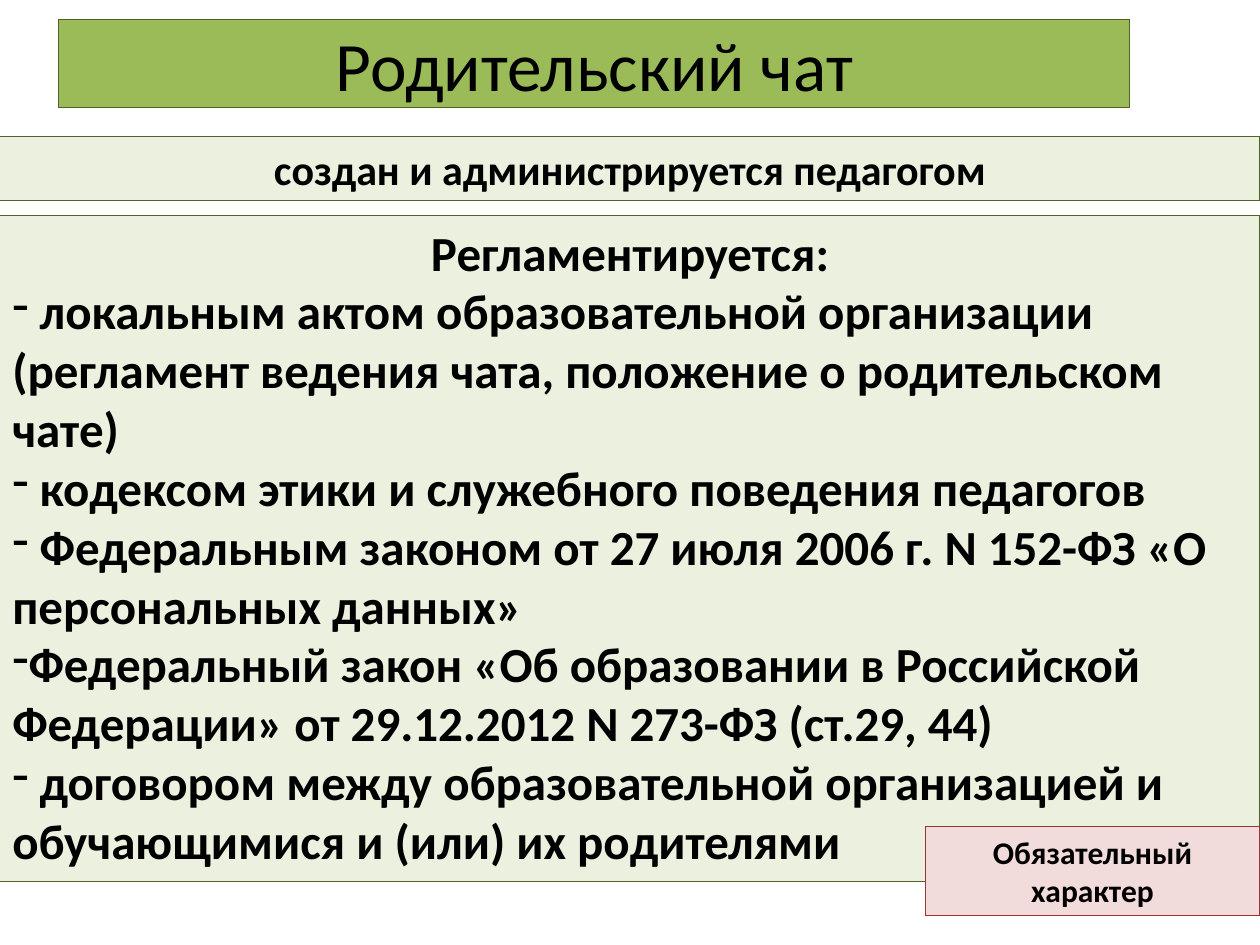
import pptx
import pptx.util
import pptx.dml.color
import pptx.enum.text
import lxml.etree

PX = 914400 / 126
FONT = "Calibri"
GREEN, PALE_GREEN, DARK_GREEN = "9BBB59", "EBF1DE", "4F6228"
PINK, DARK_RED, BLACK = "F2DCDB", "953735", "000000"

RULES = [
    " локальным актом образовательной организации (регламент ведения чата, положение о родительском чате)",
    " кодексом этики и служебного поведения педагогов",
    " Федеральным законом от 27 июля 2006 г. N 152-ФЗ «О персональных данных»",
    "Федеральный закон «Об образовании в Российской Федерации» от 29.12.2012 N 273-ФЗ (ст.29, 44)",
    " договором между образовательной организацией и обучающимися и (или) их родителями",
]

PANELS = [
    dict(box=(59, 20, 1071, 88), fill=GREEN, line=DARK_GREEN, size=39.6, bold=False,
         heading="Родительский чат", bullets=[], anchor="MIDDLE", fit="NONE"),
    dict(box=(0, 137, 1260, 64), fill=PALE_GREEN, line=DARK_GREEN, size=24, bold=True,
         heading="создан и администрируется педагогом", bullets=[],
         anchor="TOP", fit="SHAPE_TO_FIT_TEXT"),
    dict(box=(0, 216, 1260, 666), fill=PALE_GREEN, line=DARK_GREEN, size=28, bold=True,
         heading="Регламентируется:", bullets=RULES, anchor="TOP", fit="SHAPE_TO_FIT_TEXT"),
    dict(box=(925, 827, 335, 89), fill=PINK, line=DARK_RED, size=18, bold=True,
         heading="Обязательный характер", bullets=[], anchor="TOP", fit="SHAPE_TO_FIT_TEXT"),
]


def px(n):
    return pptx.util.Emu(round(n * PX))


def color(value):
    return pptx.dml.color.RGBColor.from_string(value)


def add_bullet(p):
    pPr = p._p.get_or_add_pPr()
    pPr.set("marL", "0")
    pPr.set("indent", "0")
    lxml.etree.SubElement(pPr, pptx.oxml.ns.qn("a:buFontTx"))
    lxml.etree.SubElement(pPr, pptx.oxml.ns.qn("a:buChar")).set("char", "-")


def add_text(p, text, panel):
    r = p.add_run()
    r.text = text
    style = dict(name=FONT, size=pptx.util.Pt(panel["size"]), bold=panel["bold"])
    for key, value in style.items():
        setattr(r.font, key, value)
    r.font.color.rgb = color(BLACK)


def add_panel(slide, panel):
    s = slide.shapes.add_textbox(*map(px, panel["box"]))
    s.fill.solid()
    s.fill.fore_color.rgb = color(panel["fill"])
    s.line.color.rgb = color(panel["line"])
    tf = s.text_frame
    frame = dict(word_wrap=True,
                 vertical_anchor=pptx.enum.text.MSO_ANCHOR[panel["anchor"]],
                 auto_size=pptx.enum.text.MSO_AUTO_SIZE[panel["fit"]])
    for key, value in frame.items():
        setattr(tf, key, value)
    p = tf.paragraphs[0]
    p.alignment = pptx.enum.text.PP_ALIGN.CENTER
    add_text(p, panel["heading"], panel)
    for text in panel["bullets"]:
        p = tf.add_paragraph()
        add_bullet(p)
        add_text(p, text, panel)


def main():
    prs = pptx.Presentation()
    prs.slide_width, prs.slide_height = px(1260), px(945)
    slide = prs.slides.add_slide(prs.slide_layouts[6])
    for panel in PANELS:
        add_panel(slide, panel)
    prs.save("out.pptx")


if __name__ == "__main__":
    main()
